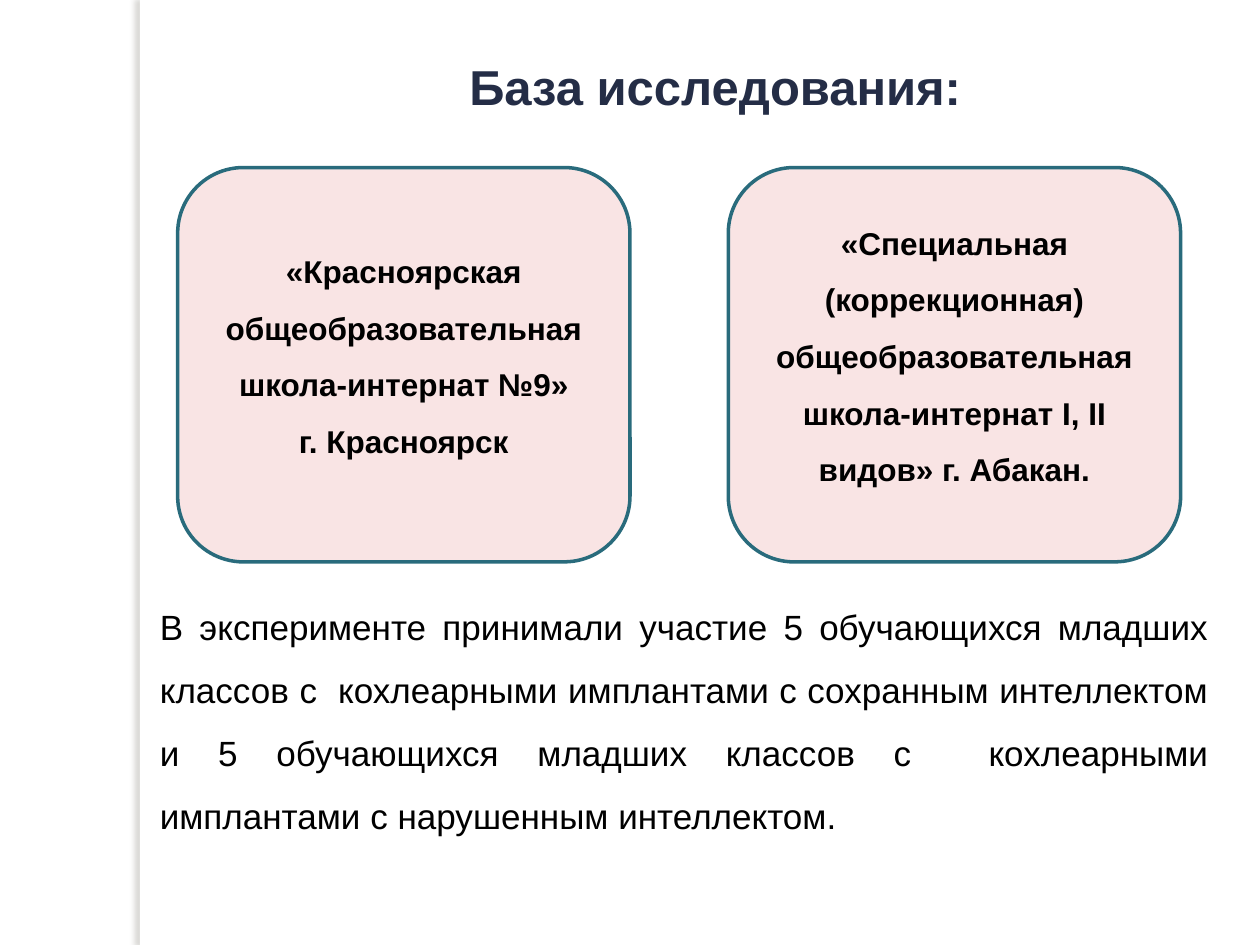
from dataclasses import dataclass

from lxml import etree
from pptx import Presentation
from pptx import util as u
from pptx.dml.color import RGBColor
from pptx.enum import shapes, text
from pptx.oxml import ns

FONT = "Arial"
BLACK, WHITE, NAVY = "000000", "FFFFFF", "242D46"
PINK, TEAL, SHADOW = "F5D3D3", "296B7C", "736F63"
CENTER, JUSTIFY = text.PP_ALIGN.CENTER, text.PP_ALIGN.JUSTIFY


@dataclass
class School:
    left: float
    lines: tuple[str, ...]


SCHOOLS = (
    School(1.41, ("«Красноярская общеобразовательная школа-интернат №9»", "г. Красноярск")),
    School(5.78, ("«Специальная (коррекционная) общеобразовательная "
                  "школа-интернат I, II видов» г. Абакан.",)),
)
SUMMARY = ("В эксперименте принимали участие 5 обучающихся младших классов с  кохлеарными "
           "имплантами с сохранным интеллектом и 5 обучающихся младших классов с  "
           "кохлеарными имплантами с нарушенным интеллектом.")


def rgb(color: str) -> RGBColor:
    return RGBColor.from_string(color)


def child(parent, tag: str, **attributes):
    """Add a DrawingML element under parent."""
    return etree.SubElement(parent, ns.qn(f"a:{tag}"), attributes)


def write(box, lines: tuple[str, ...], *, size: float, color: str = BLACK,
          bold: bool = False, align=CENTER) -> None:
    frame = box.text_frame
    frame.word_wrap = True
    frame.vertical_anchor = text.MSO_ANCHOR.MIDDLE
    for index, line in enumerate(lines):
        para = frame.add_paragraph() if index else frame.paragraphs[0]
        para.alignment = align
        para.line_spacing = 1.5
        span = para.add_run()
        span.text = line
        span.font.name, span.font.size, span.font.bold = FONT, u.Pt(size), bold
        span.font.color.rgb = rgb(color)


def add_box(page, left: float, top: float, width: float, height: float):
    return page.shapes.add_textbox(*map(u.Inches, (left, top, width, height)))


def add_shape(page, kind, left: float, top: float, width: float, height: float, fill: str):
    shape = page.shapes.add_shape(kind, *map(u.Inches, (left, top, width, height)))
    shape.shadow.inherit = False
    shape.fill.solid()
    shape.fill.fore_color.rgb = rgb(fill)
    return shape


def add_side_edge(page) -> None:
    """White strip whose soft shadow falls to the left."""
    strip = add_shape(page, shapes.MSO_SHAPE.RECTANGLE, 1.11, 0, 0.08, 7.5, WHITE)
    strip.line.fill.background()
    effects = strip._element.spPr.find(ns.qn("a:effectLst"))
    shadow = child(effects, "outerShdw", blurRad=str(u.Pt(3)), dist=str(u.Pt(3)),
                   dir="10800000", algn="tl", rotWithShape="0")
    child(child(shadow, "srgbClr", val=SHADOW), "alpha", val="25000")


def add_school(page, school: School) -> None:
    card = add_shape(page, shapes.MSO_SHAPE.ROUNDED_RECTANGLE,
                     school.left, 1.33, 3.59, 3.13, PINK)
    fill_color = card._element.spPr.find(ns.qn("a:solidFill"))[0]
    child(fill_color, "alpha", val="60000")
    card.line.color.rgb = rgb(TEAL)
    card.line.width = u.Pt(2)
    card.text_frame.margin_bottom = u.Inches(0.34)
    write(card, school.lines, size=18, bold=True)


def main() -> None:
    deck = Presentation()
    deck.slide_width, deck.slide_height = u.Inches(10), u.Inches(7.5)
    page = deck.slides.add_slide(deck.slide_layouts[6])
    page.background.fill.solid()
    page.background.fill.fore_color.rgb = rgb(WHITE)

    add_side_edge(page)
    title = add_box(page, 1.09, 0.16, 8.67, 0.81)
    title.text_frame.margin_left = u.Inches(0.6)
    write(title, ("База исследования:",), size=28, color=NAVY, bold=True)
    summary = add_box(page, 1.17, 4.61, 8.52, 2.06)
    write(summary, (SUMMARY,), size=20, align=JUSTIFY)
    for school in SCHOOLS:
        add_school(page, school)

    deck.save("out.pptx")


if __name__ == "__main__":
    main()
